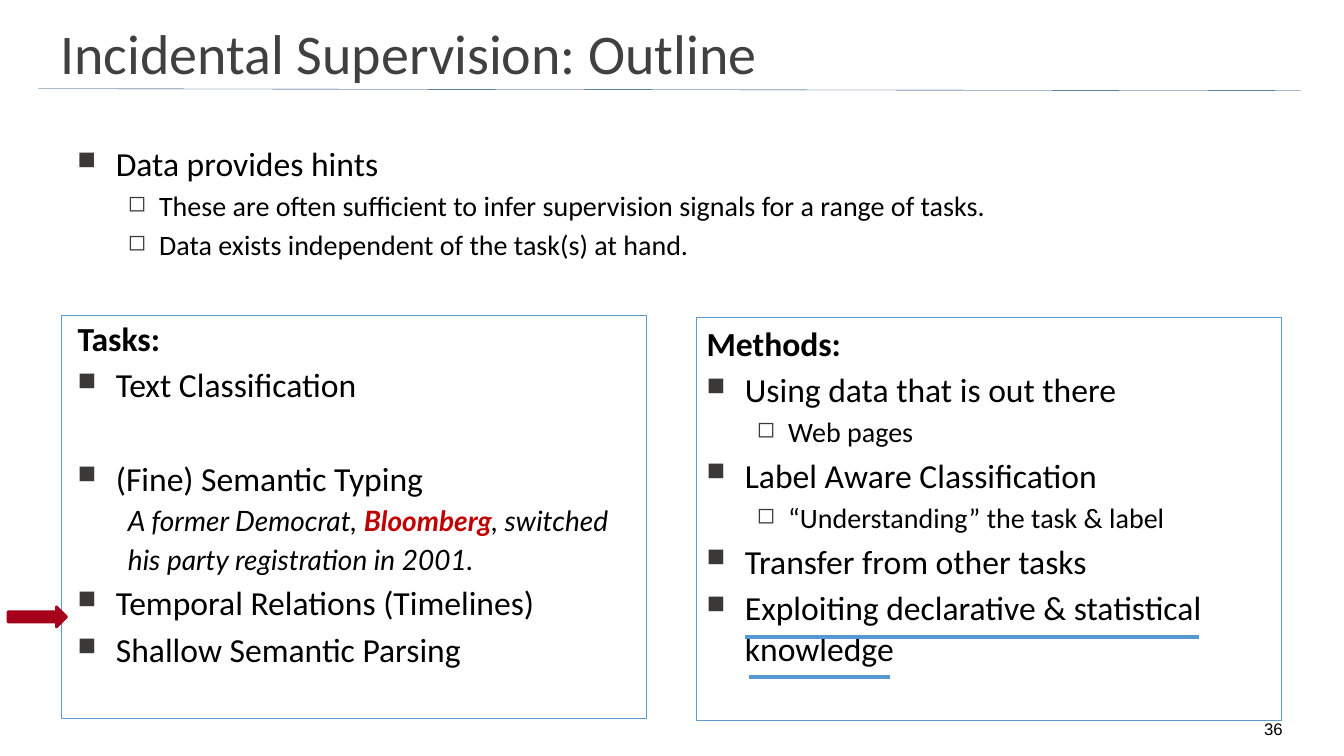
from lxml import etree
from pptx import Presentation
from pptx.dml.color import RGBColor
from pptx.enum.shapes import MSO_CONNECTOR, MSO_SHAPE
from pptx.enum.text import MSO_ANCHOR, PP_ALIGN
from pptx.oxml.ns import qn
from pptx.util import Inches, Pt

LINE = MSO_CONNECTOR.STRAIGHT
RECT, ARROW = MSO_SHAPE.RECTANGLE, MSO_SHAPE.RIGHT_ARROW
TOP, MID, LOW = MSO_ANCHOR.TOP, MSO_ANCHOR.MIDDLE, MSO_ANCHOR.BOTTOM
LEFT, MIDST = PP_ALIGN.LEFT, PP_ALIGN.CENTER

HUES = {"title": "404040", "text": "000000", "name": "C00000",
        "mark": "3B3838", "frame": "5B9BD5", "stroke": "5698D3",
        "rule": "093D6E", "arrow": "A7001B"}

# kind: (level, left, indent, size, bullet, bullet size, font, bold, italic)
KINDS = {
    "head": (0, 0, 0, 24, None, 0, "Calibri", True, False),
    "item": (0, 0.38, -0.38, 24, "■", 75, "Calibri", False, False),
    "sub": (1, 0.81, -0.31, 20, "◻", 80, "Calibri", False, False),
    "quote": (1, 0.5, 0, 20, None, 0, "Lato", False, True),
}

HINTS = [
    ("item", "Data provides hints"),
    ("sub", "These are often sufficient to infer supervision signals "
            "for a range of tasks."),
    ("sub", "Data exists independent of the task(s) at hand."),
]
TASKS = [
    ("head", "Tasks:"),
    ("item", "Text Classification"),
    ("item", "(Fine) Semantic Typing"),
    ("quote", "A former Democrat, |Bloomberg|, switched"),
    ("quote", "his party registration in 2001."),
    ("item", "Temporal Relations (Timelines)"),
    ("item", "Shallow Semantic Parsing"),
]
METHODS = [
    ("head", "Methods:"),
    ("item", "Using data that is out there"),
    ("sub", "Web pages"),
    ("item", "Label Aware Classification"),
    ("sub", "“Understanding” the task & label"),
    ("item", "Transfer from other tasks"),
    ("item", "Exploiting declarative & statistical knowledge"),
]


def hue(key):
    """Return the named colour."""
    return RGBColor.from_string(HUES[key])


def style(font, size, face="Calibri", key="text", bold=False, slant=False):
    """Set the look of a font."""
    font.size, font.name = Pt(size), face
    font.bold, font.italic = bold, slant
    font.color.rgb = hue(key)


def bullet(para, left, indent, mark, scale):
    """Set the indents and the bullet of a paragraph."""
    props = para._p.get_or_add_pPr()
    props.set("marL", str(Inches(left)))
    props.set("indent", str(Inches(indent)))
    if not mark:
        etree.SubElement(props, qn("a:buNone"))
        return
    tint = etree.SubElement(props, qn("a:buClr"))
    etree.SubElement(tint, qn("a:srgbClr")).set("val", HUES["mark"])
    etree.SubElement(props, qn("a:buSzPct")).set("val", str(scale * 1000))
    etree.SubElement(props, qn("a:buChar")).set("char", mark)


def fill_list(frame, rows, gaps=()):
    """Write the rows of a list, with wider space above the rows in gaps."""
    frame.word_wrap, frame.vertical_anchor = True, TOP
    for num, (kind, text) in enumerate(rows):
        level, left, indent, size, mark, scale, face, bold, slant = KINDS[kind]
        para = frame.paragraphs[0] if num == 0 else frame.add_paragraph()
        para.level, para.alignment = level, LEFT
        bullet(para, left, indent, mark, scale)
        if num:
            para.space_before = Pt(38 if num in gaps else size * 0.19)
        for pos, part in enumerate(text.split("|")):
            run = para.add_run()
            run.text = part
            name = pos == 1
            style(run.font, size, face, "name" if name else "text",
                  bold or name, slant)


def add_box(slide, x, y, wide, high):
    """Add a text box and return its frame."""
    box = slide.shapes.add_textbox(Inches(x), Inches(y),
                                   Inches(wide), Inches(high))
    return box.text_frame


def add_form(slide, kind, x, y, wide, high, key, width, solid=False):
    """Add an outlined preset shape, filled if solid."""
    form = slide.shapes.add_shape(kind, Inches(x), Inches(y),
                                  Inches(wide), Inches(high))
    form.shadow.inherit = False
    form.line.color.rgb, form.line.width = hue(key), Pt(width)
    if solid:
        form.fill.solid()
        form.fill.fore_color.rgb = hue(key)
    else:
        form.fill.background()
    return form


def add_line(slide, x1, y1, x2, y2, key, width):
    """Add a straight line with no shadow."""
    line = slide.shapes.add_connector(LINE, Inches(x1), Inches(y1),
                                      Inches(x2), Inches(y2))
    line.line.color.rgb, line.line.width = hue(key), Pt(width)
    etree.SubElement(line._element.spPr, qn("a:effectLst"))


def add_title(slide, text):
    """Place and format the slide title."""
    title = slide.shapes.title
    title.left, title.top = Inches(0.5), Inches(0.23)
    title.width, title.height = Inches(10.81), Inches(0.58)
    frame = title.text_frame
    frame.text, frame.vertical_anchor = text, MID
    frame.paragraphs[0].alignment = LEFT
    style(frame.paragraphs[0].runs[0].font, 40, key="title")


def add_page(slide, text):
    """Add the page number."""
    frame = add_box(slide, 12.35, 7.13, 0.56, 0.25)
    frame.word_wrap, frame.vertical_anchor = True, LOW
    para = frame.paragraphs[0]
    para.text, para.alignment = text, MIDST
    style(para.runs[0].font, 12, "Arial")


def main():
    """Build the outline slide."""
    deck = Presentation()
    deck.slide_width, deck.slide_height = Inches(13.33), Inches(7.5)
    slide = deck.slides.add_slide(deck.slide_layouts[5])
    add_line(slide, 0.38, 0.88, 12.9, 0.9, "rule", 0.25)
    add_title(slide, "Incidental Supervision: Outline")
    fill_list(add_box(slide, 0.67, 1.37, 12, 1.4), HINTS)
    add_page(slide, "36")

    methods = add_form(slide, RECT, 6.91, 3.15, 5.8, 4, "frame", 1)
    fill_list(methods.text_frame, METHODS)
    tasks = add_form(slide, RECT, 0.61, 3.13, 5.8, 4, "frame", 1)
    tasks.text_frame.margin_left = Inches(0.16)
    tasks.text_frame.margin_top = Inches(0.02)
    fill_list(tasks.text_frame, TASKS, gaps=(2,))

    add_form(slide, ARROW, 0.08, 6.02, 0.58, 0.2, "arrow", 2, solid=True)
    for x1, x2, y in ((7.39, 11.89, 6.32), (7.43, 8.83, 6.72)):
        add_line(slide, x1, y, x2, y, "stroke", 3)
    deck.save("out.pptx")


if __name__ == "__main__":
    main()
